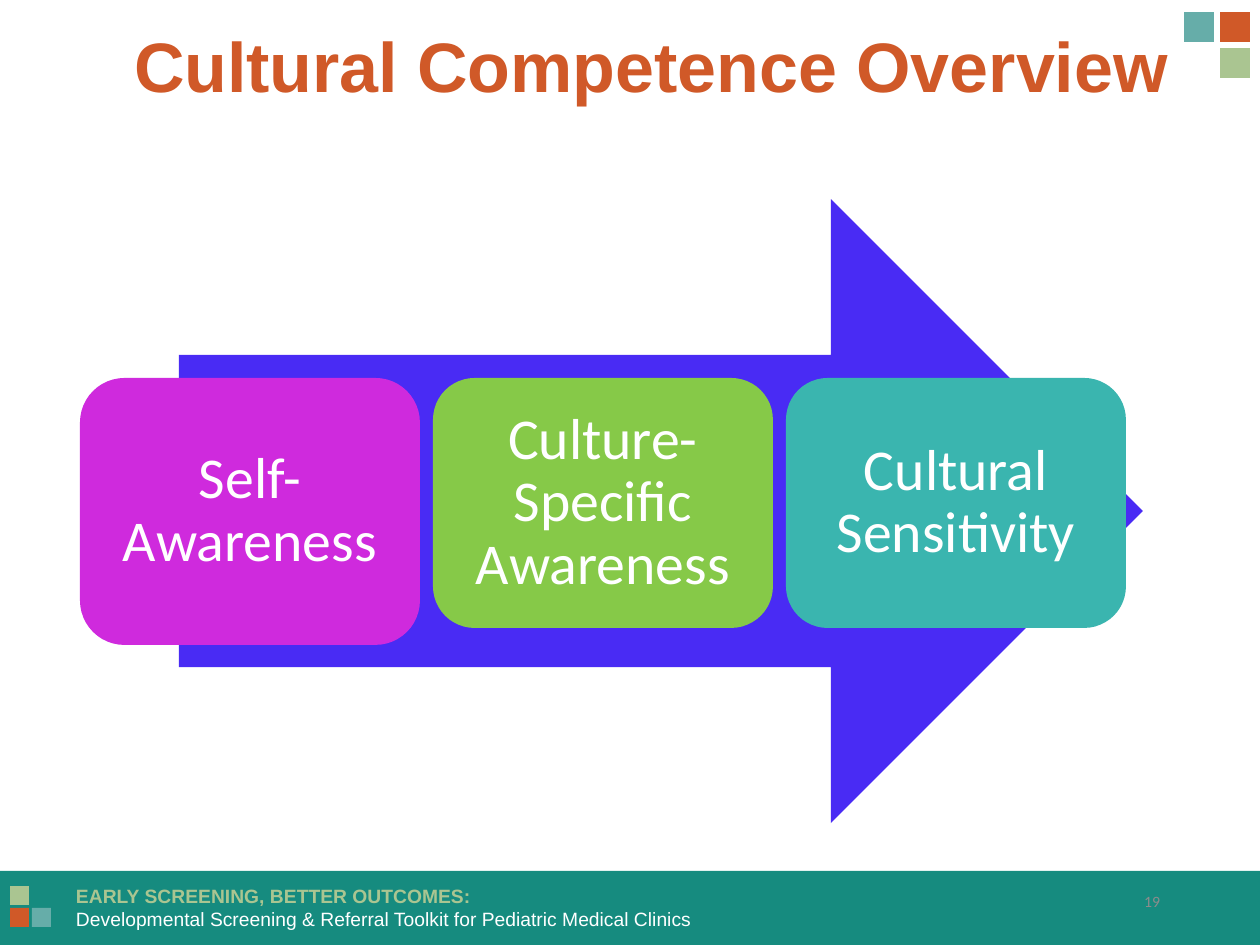
"""Build the Cultural Competence Overview slide."""
from dataclasses import dataclass

from pptx import Presentation
from pptx.dml.color import RGBColor
from pptx.enum.shapes import MSO_SHAPE
from pptx.enum.text import MSO_ANCHOR, PP_ALIGN
from pptx.shapes.autoshape import Shape
from pptx.slide import Slide
from pptx.util import Emu, Pt

RECTANGLE = MSO_SHAPE.RECTANGLE
ROUNDED = MSO_SHAPE.ROUNDED_RECTANGLE
ARROW = MSO_SHAPE.RIGHT_ARROW
TOP, MIDDLE = MSO_ANCHOR.TOP, MSO_ANCHOR.MIDDLE
LEFT, CENTER, RIGHT = PP_ALIGN.LEFT, PP_ALIGN.CENTER, PP_ALIGN.RIGHT

EMU_PER_PX = 914400 / 126
ORANGE, SAGE, AQUA = "D05928", "AAC591", "66ADA9"
TEAL, VIOLET, WHITE, GRAY = "168B7F", "492BF4", "FFFFFF", "8C8C8C"


@dataclass(frozen=True)
class Area:
    left: int
    top: int
    width: int
    height: int


@dataclass(frozen=True)
class Line:
    text: str
    size: int
    color: str
    font: str = "Arial"
    bold: bool = False
    align: PP_ALIGN = LEFT
    spacing: float = 1.0


@dataclass(frozen=True)
class Card:
    text: str
    color: str
    height: int


@dataclass(frozen=True)
class Square:
    column: int
    row: int
    color: str


CARDS = (
    Card("Self-Awareness", "CF2ADD", 267),
    Card("Culture- Specific Awareness", "86C948", 250),
    Card("Cultural Sensitivity", "3AB5AF", 250),
)
FOOTER_SQUARES = (Square(0, 0, SAGE), Square(0, 1, ORANGE), Square(1, 1, AQUA))
CORNER_SQUARES = (Square(1, 1, SAGE), Square(1, 0, ORANGE), Square(0, 0, AQUA))


def px(length: int) -> Emu:
    return Emu(round(length * EMU_PER_PX))


def rgb(color: str) -> RGBColor:
    return RGBColor.from_string(color)


def bounds(area: Area) -> tuple[Emu, Emu, Emu, Emu]:
    return px(area.left), px(area.top), px(area.width), px(area.height)


def add_block(page: Slide, kind: MSO_SHAPE, area: Area, color: str) -> Shape:
    block = page.shapes.add_shape(kind, *bounds(area))
    block.shadow.inherit = False
    block.fill.solid()
    block.fill.fore_color.rgb = rgb(color)
    block.line.fill.background()
    return block


def write(box: Shape, lines: list[Line], anchor: MSO_ANCHOR, margins: tuple[int, int]) -> None:
    frame = box.text_frame
    frame.word_wrap = True
    frame.vertical_anchor = anchor
    frame.margin_left = frame.margin_right = px(margins[0])
    frame.margin_top = frame.margin_bottom = px(margins[1])
    for index, line in enumerate(lines):
        para = frame.add_paragraph() if index else frame.paragraphs[0]
        para.text = line.text
        para.alignment = line.align
        para.line_spacing = line.spacing
        para.font.name = line.font
        para.font.size = Pt(line.size)
        para.font.bold = line.bold
        para.font.color.rgb = rgb(line.color)


def add_text(page: Slide, area: Area, lines: list[Line], anchor: MSO_ANCHOR = TOP,
             margins: tuple[int, int] = (13, 6)) -> None:
    write(page.shapes.add_textbox(*bounds(area)), lines, anchor, margins)


def add_squares(page: Slide, squares: tuple[Square, ...], left: int, top: int,
                side: int, pitch: int) -> None:
    for square in squares:
        area = Area(left + square.column * pitch, top + square.row * pitch, side, side)
        add_block(page, RECTANGLE, area, square.color)


def add_cards(page: Slide, left: int, top: int, width: int, gap: int) -> None:
    for index, card in enumerate(CARDS):
        area = Area(left + index * (width + gap), top, width, card.height)
        block = add_block(page, ROUNDED, area, card.color)
        label = Line(card.text, 33, WHITE, "Calibri", align=CENTER, spacing=0.9)
        write(block, [label], MIDDLE, (17, 17))


def main() -> None:
    deck = Presentation()
    deck.slide_width, deck.slide_height = px(1260), px(945)
    page = deck.slides.add_slide(deck.slide_layouts[6])

    add_block(page, RECTANGLE, Area(0, 871, 1260, 74), TEAL)
    add_text(page, Area(63, 878, 1092, 59), [
        Line("EARLY SCREENING, BETTER OUTCOMES:", 11, SAGE, bold=True),
        Line("Developmental Screening & Referral Toolkit for Pediatric Medical Clinics", 11, WHITE),
    ])
    add_squares(page, FOOTER_SQUARES, 10, 886, 19, 22)
    add_squares(page, CORNER_SQUARES, 1184, 12, 30, 36)

    title = Line("Cultural Competence Overview", 40, ORANGE, bold=True, align=CENTER, spacing=0.9)
    add_text(page, Area(84, 32, 1134, 157), [title], margins=(0, 0))
    add_block(page, ARROW, Area(179, 199, 964, 624), VIOLET)
    add_cards(page, left=80, top=378, width=340, gap=13)
    add_text(page, Area(890, 876, 283, 50), [Line("19", 9, GRAY, "Calibri", align=RIGHT)], MIDDLE)

    deck.save("out.pptx")


if __name__ == "__main__":
    main()
